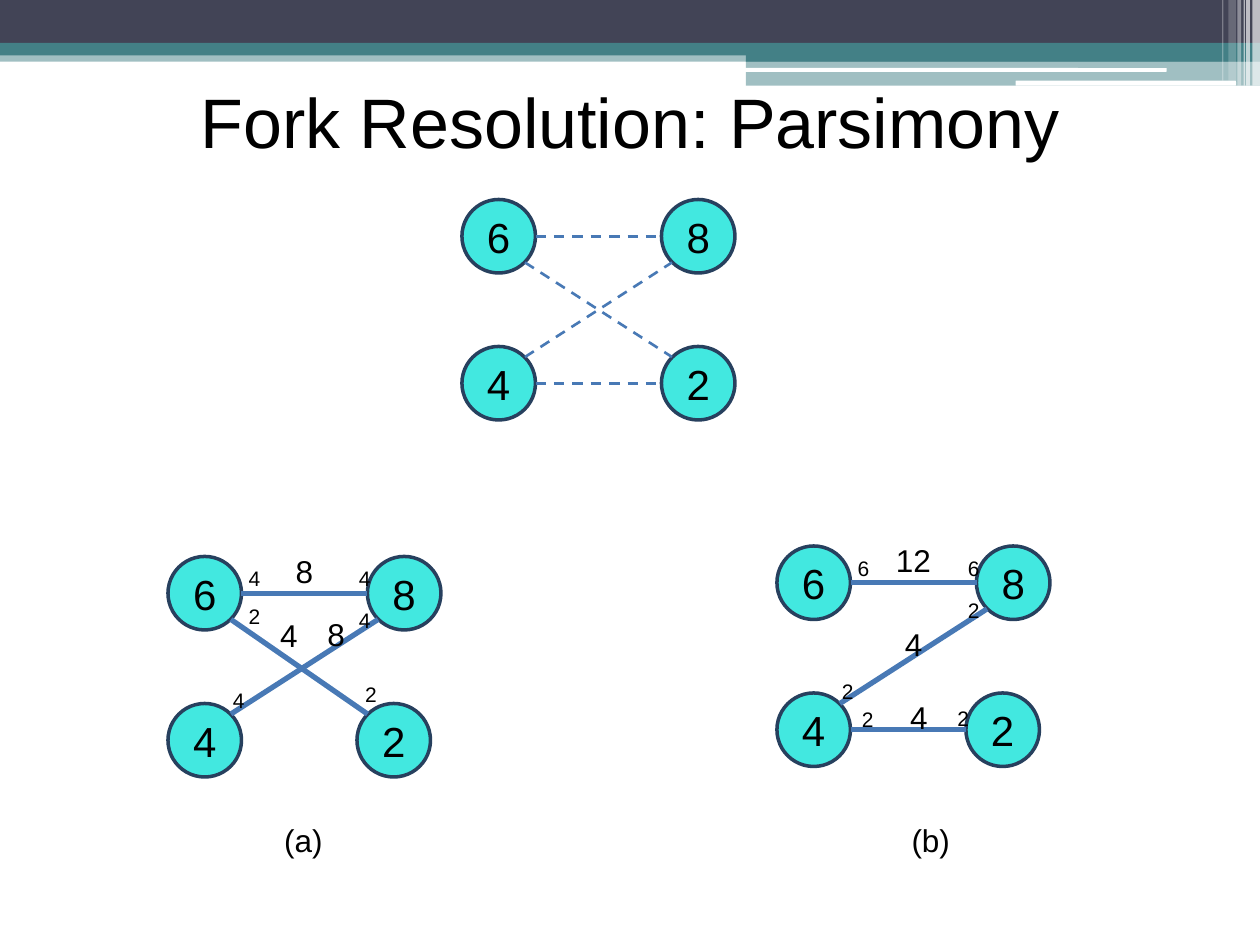
from pptx import Presentation
from pptx.dml.color import RGBColor
from pptx.enum.dml import MSO_LINE
from pptx.enum.shapes import MSO_CONNECTOR, MSO_SHAPE
from pptx.enum.text import MSO_ANCHOR, PP_ALIGN
from pptx.oxml.ns import qn
from pptx.util import Inches, Pt
from lxml.etree import SubElement

HEX = {"ink": "000000", "node": "42E8E0", "rim": "27405E", "edge": "4879B5",
       "dark": "424456", "teal": "438086", "white": "FFFFFF"}
RGB = {name: RGBColor.from_string(code) for name, code in HEX.items()}

deck = Presentation()
deck.slide_width, deck.slide_height = Inches(10), Inches(7.5)
slide = deck.slides.add_slide(deck.slide_layouts[5])
CELL = deck.slide_width / 120  # the slide is a grid of 120 columns by 90 rows


def grid(*cells):
    return [round(cell * CELL) for cell in cells]


def write(shape, text, size, anchor, insets):
    """Put one centred run in the shape; insets are left, top, right, bottom in inches."""
    frame = shape.text_frame
    frame.word_wrap = True
    frame.vertical_anchor = anchor
    (frame.margin_left, frame.margin_top,
     frame.margin_right, frame.margin_bottom) = map(Inches, insets)
    para = frame.paragraphs[0]
    para.alignment = PP_ALIGN.CENTER
    run = para.add_run()
    run.text = text
    run.font.name = "Arial"
    run.font.size = Pt(size)
    run.font.color.rgb = RGB["ink"]


# Header bands and stripes: left, top, width, height in inches, colour, opacity
bands = [
    (0, 0.4, 10, 0.09, "teal", 50),
    (0, 0, 10, 0.34, "dark", 100),
    (0, 0.34, 10, 0.1, "teal", 100),
    (5.92, 0.39, 4.08, 0.1, "teal", 100),
    (5.92, 0.48, 4.08, 0.2, "teal", 50),
    (5.91, 0.54, 3.35, 0.03, "white", 100),
    (8.06, 0.64, 1.75, 0.04, "white", 100),
    (9.94, 0, 0.06, 0.68, "white", 65),
    (9.89, 0, 0.03, 0.68, "white", 65),
    (9.87, 0, 0.01, 0.68, "white", 60),
    (9.82, 0, 0.03, 0.68, "white", 40),
    (9.75, 0, 0.06, 0.64, "white", 20),
    (9.7, 0, 0.01, 0.64, "white", 30),
]
for *box, color, alpha in bands:
    kind = MSO_SHAPE.ROUNDED_RECTANGLE if box[3] < 0.05 else MSO_SHAPE.RECTANGLE
    band = slide.shapes.add_shape(kind, *map(Inches, box))
    band.shadow.inherit = False
    band.line.fill.background()
    band.fill.solid()
    band.fill.fore_color.rgb = RGB[color]
    if alpha < 100:
        tint = band.fill._xPr.find(".//" + qn("a:srgbClr"))
        SubElement(tint, qn("a:alpha"), val=str(alpha * 1000))

title = slide.shapes.title
title.left, title.top, title.width, title.height = grid(6, 7, 108, 8.4)
write(title, "Fork Resolution: Parsimony", 40, MSO_ANCHOR.MIDDLE, (0, 0.04, 0, 0))

# Each graph has nodes 6 and 8 above 4 and 2. Labels: text, size, column and
# row from the graph's corner, width in columns.
SIZE, DROP, SPAN = 7, 14, 19
graphs = [
    {"at": (44, 19), "low": 19, "pen": (1.5, MSO_LINE.DASH),
     "edges": ["68", "62", "48", "42"], "notes": [], "name": None},
    {"at": (16, 53), "low": 18, "pen": (3, MSO_LINE.SOLID),
     "edges": ["68", "62", "48"],
     "notes": [("8", 18, 10, -1, 6), ("4", 12, 6.5, 0.3, 2.4), ("4", 12, 17, 0.3, 2.4),
               ("4", 12, 17, 4.25, 2.4), ("2", 12, 6.5, 3.9, 2.4),
               ("4", 12, 5, 11.9, 2.4), ("8", 18, 14, 5, 2.4),
               ("2", 12, 17.6, 11.3, 2.4), ("4", 18, 9.5, 5.1, 2.4)],
     "name": ("(a)", 24)},
    {"at": (74, 52), "low": 18, "pen": (3, MSO_LINE.SOLID),
     "edges": ["68", "42", "48"],
     "notes": [("12", 18, 10, -1.1, 6), ("6", 12, 6.5, 0.3, 2.4), ("6", 12, 17, 0.3, 2.4),
               ("2", 12, 17, 4.3, 2.4), ("2", 12, 6.9, 14.7, 2.4),
               ("2", 12, 5, 12, 2.4), ("4", 18, 11, 6.9, 2.4),
               ("2", 12, 16, 14.6, 2.4), ("4", 18, 11.5, 13.9, 2.4)],
     "name": ("(b)", 83.75)},
]
for graph in graphs:
    left, top = graph["at"]
    shapes = slide.shapes.add_group_shape().shapes
    nodes = {"6": (left, top), "4": (left, top + DROP),
             "8": (left + SPAN, top), "2": (left + graph["low"], top + DROP)}
    for text, (x, y) in nodes.items():
        node = shapes.add_shape(MSO_SHAPE.OVAL, *grid(x, y, SIZE, SIZE))
        node.shadow.inherit = False
        node.fill.solid()
        node.fill.fore_color.rgb = RGB["node"]
        node.line.color.rgb = RGB["rim"]
        node.line.width = Pt(2)
        write(node, text, 24, MSO_ANCHOR.MIDDLE, (0.1, 0.05, 0.1, 0.05))

    for start, end in graph["edges"]:
        (x1, y1), (x2, y2) = nodes[start], nodes[end]
        if y1 == y2:  # side to side
            ends = (x1 + SIZE, y1 + SIZE / 2, x2, y2 + SIZE / 2)
        elif y1 < y2:  # lower right to upper left
            ends = (x1 + SIZE - 1, y1 + SIZE - 1, x2 + 1, y2 + 1)
        else:  # upper right to lower left
            ends = (x1 + SIZE - 1, y1 + 1, x2 + 1, y2 + SIZE - 1)
        edge = shapes.add_connector(MSO_CONNECTOR.STRAIGHT, *grid(*ends))
        edge.line.color.rgb = RGB["edge"]
        edge.line.width = Pt(graph["pen"][0])
        edge.line.dash_style = graph["pen"][1]
        SubElement(edge._element.spPr, qn("a:effectLst"))

    for text, size, x, y, width in graph["notes"]:
        high = 4.8 if size == 18 else 3.6
        note = shapes.add_textbox(*grid(left + x, top + y, width, high))
        write(note, text, size, MSO_ANCHOR.TOP, (0.1, 0.05, 0.1, 0.05))

    if graph["name"]:
        text, x = graph["name"]
        name = shapes.add_textbox(*grid(x, 77.5, 9.8, 5.4))
        write(name, text, 18, MSO_ANCHOR.TOP, (0.09, 0.06, 0.09, 0.04))

deck.save("out.pptx")
